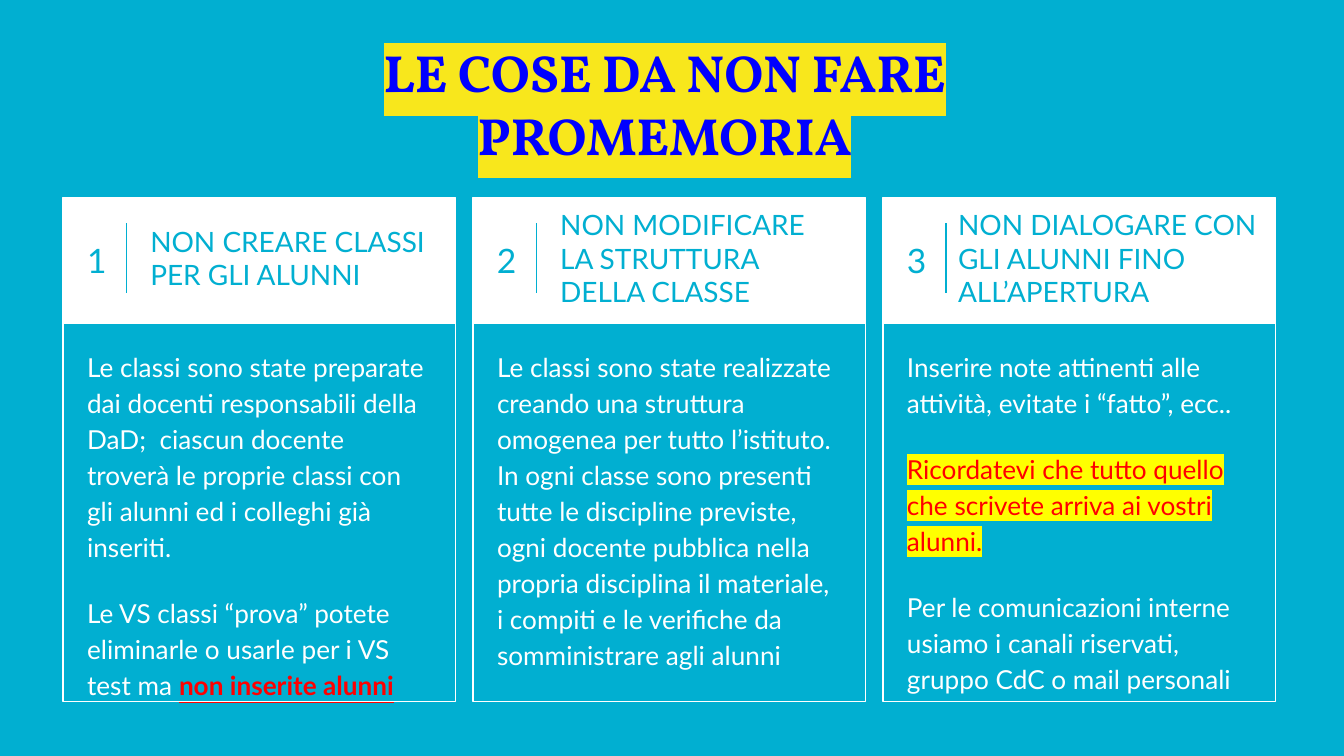
from dataclasses import dataclass

from lxml import etree
from pptx import Presentation
from pptx.dml.color import RGBColor
from pptx.enum.shapes import MSO_CONNECTOR, MSO_SHAPE
from pptx.enum.text import MSO_ANCHOR, PP_ALIGN
from pptx.oxml.ns import qn
from pptx.util import Inches, Pt

RECTANGLE = MSO_SHAPE.RECTANGLE
STRAIGHT = MSO_CONNECTOR.STRAIGHT
TOP, MIDDLE = MSO_ANCHOR.TOP, MSO_ANCHOR.MIDDLE
LEFT, CENTER = PP_ALIGN.LEFT, PP_ALIGN.CENTER

COLORS = {
    "teal": "01AFD1",
    "white": "FFFFFF",
    "blue": "0000FF",
    "gold": "F8E71C",
    "red": "FF0000",
    "yellow": "FFFF00",
}


@dataclass
class Span:
    text: str
    color: str = "white"
    size: float = 14
    font: str = "Lato"
    bold: bool = False
    underline: bool = False
    highlight: str = ""


class SlideBuilder:
    def __init__(self, slide):
        self.slide = slide

    def color(self, name):
        return RGBColor.from_string(COLORS[name])

    def background(self, name):
        fill = self.slide.background.fill
        fill.solid()
        fill.fore_color.rgb = self.color(name)

    def rectangle(self, group, left, top, width, height, fill=None, line=None):
        shape = group.shapes.add_shape(
            RECTANGLE, Inches(left), Inches(top), Inches(width), Inches(height)
        )
        shape.shadow.inherit = False
        if fill:
            shape.fill.solid()
            shape.fill.fore_color.rgb = self.color(fill)
        else:
            shape.fill.background()
        if line:
            shape.line.color.rgb = self.color(line)
            shape.line.width = Pt(0.75)
        else:
            shape.line.fill.background()

    def divider(self, x, top, bottom):
        line = self.slide.shapes.add_connector(
            STRAIGHT, Inches(x), Inches(top), Inches(x), Inches(bottom)
        )
        line.line.color.rgb = self.color("teal")
        line.line.width = Pt(0.75)
        etree.SubElement(line._element.spPr, qn("a:effectLst"))

    def add_span(self, para, span):
        for index, text in enumerate(span.text.split("\n")):
            if index:
                para.add_line_break()
            run = para.add_run()
            run.text = text
            font = run.font
            font.size = Pt(span.size)
            font.bold = span.bold
            font.underline = span.underline
            font.color.rgb = self.color(span.color)
            if span.highlight:
                mark = etree.Element(qn("a:highlight"))
                etree.SubElement(mark, qn("a:srgbClr"), val=COLORS[span.highlight])
                run._r.rPr.find(qn("a:solidFill")).addnext(mark)
            font.name = span.font

    def text(self, left, top, width, height, paragraphs, align=LEFT,
             anchor=TOP, spacing=1.0, gap=0):
        box = self.slide.shapes.add_textbox(
            Inches(left), Inches(top), Inches(width), Inches(height)
        )
        frame = box.text_frame
        frame.word_wrap = True
        frame.vertical_anchor = anchor
        frame.margin_left = frame.margin_right = Inches(0.1)
        frame.margin_top = frame.margin_bottom = Inches(0.1)
        for index, spans in enumerate(paragraphs):
            para = frame.add_paragraph() if index else frame.paragraphs[0]
            para.alignment = align
            para.line_spacing = spacing
            para.space_before = Pt(gap if index else 0)
            for span in spans:
                self.add_span(para, span)

    def card(self, number, left, heading, heading_left, heading_width, body):
        group = self.slide.shapes.add_group_shape()
        self.rectangle(group, left, 1.47, 2.92, 3.75, line="white")
        self.rectangle(group, left, 1.47, 2.92, 0.94, fill="white")
        self.text(left + 0.06, 1.46, 0.38, 0.9,
                  [[Span(str(number), "teal", 18)]], CENTER, MIDDLE, 1.15)
        self.divider(left + 0.47, 1.66, 2.18)
        self.text(left + 0.08, 2.48, 2.77, 2.74, body, spacing=1.15, gap=16)
        self.text(heading_left, 1.47, heading_width, 0.9,
                  [[Span(heading, "teal", 15)]], anchor=MIDDLE)


CARDS = [
    ("NON CREARE CLASSI PER GLI ALUNNI", 1.02, 2.3, [
        [Span("Le classi sono state preparate dai docenti responsabili della "
              "DaD;  ciascun docente troverà le proprie classi con gli alunni "
              "ed i colleghi già inseriti.")],
        [Span("Le VS classi “prova” potete eliminarle o usarle per i VS test ma "),
         Span("non inserite alunni", "red", bold=True, underline=True)],
    ]),
    ("NON MODIFICARE LA STRUTTURA DELLA CLASSE", 4.07, 2.3, [
        [Span("Le classi sono state realizzate creando una struttura omogenea "
              "per tutto l’istituto. In ogni classe sono presenti tutte le "
              "discipline previste, ogni docente pubblica nella propria "
              "disciplina il materiale, i compiti e le verifiche da "
              "somministrare agli alunni")],
    ]),
    ("NON DIALOGARE CON GLI ALUNNI FINO ALL’APERTURA", 7.03, 2.55, [
        [Span("Inserire note attinenti alle attività, evitate i “fatto”, ecc..")],
        [Span("Ricordatevi che tutto quello che scrivete arriva ai vostri alunni.",
              "red", highlight="yellow")],
        [Span("Per le comunicazioni interne usiamo i canali riservati, gruppo "
              "CdC o mail personali")],
    ]),
]


def main():
    deck = Presentation()
    deck.slide_width = Inches(10)
    deck.slide_height = deck.slide_width * 9 // 16
    builder = SlideBuilder(deck.slides.add_slide(deck.slide_layouts[6]))
    builder.background("teal")
    title = Span("LE COSE DA NON FARE\nPROMEMORIA", "blue", 28, "Vollkorn",
                 bold=True, highlight="gold")
    builder.text(0.37, 0.2, 9.15, 1.01, [[title]], CENTER)
    for index, (heading, heading_left, heading_width, body) in enumerate(CARDS):
        builder.card(index + 1, 0.47 + 3.05 * index, heading,
                     heading_left, heading_width, body)
    deck.save("out.pptx")


if __name__ == "__main__":
    main()
